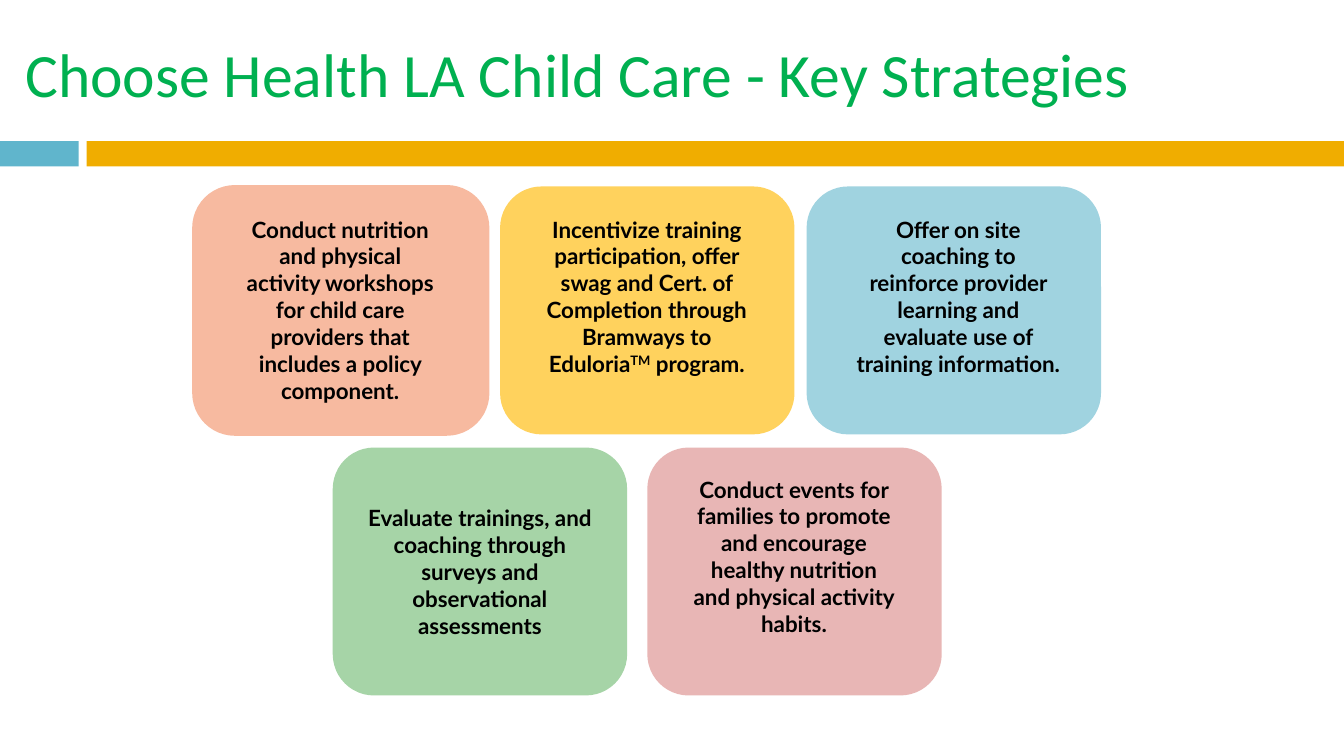
from dataclasses import dataclass

from pptx import Presentation
from pptx.dml.color import RGBColor
from pptx.enum.shapes import MSO_SHAPE
from pptx.enum.text import MSO_ANCHOR, MSO_AUTO_SIZE, PP_ALIGN
from pptx.util import Inches, Pt


@dataclass(frozen=True)
class Theme:
    """Colours, fonts and type sizes of the slide."""
    title_font: str = "Calibri"
    title_size: int = 44
    title_color: str = "00B050"
    body_font: str = "Lato"
    body_size: int = 16
    body_color: str = "000000"
    blue: str = "60B5CC"
    gold: str = "F0AD00"
    salmon: str = "F7BAA0"
    yellow: str = "FFD25D"
    sky: str = "A0D3E0"
    green: str = "A6D4A7"
    pink: str = "E8B6B5"


THEME = Theme()
HEADING = "Choose Health LA Child Care - Key Strategies"
BANDS = [(0, 0.78, THEME.blue), (0.86, 12.47, THEME.gold)]

WORKSHOPS = ["Conduct nutrition and physical activity workshops for child care "
             "providers that includes a policy component."]
INCENTIVES = ["Incentivize training participation, offer swag and Cert. of "
              "Completion through Bramways to Eduloria", "TM", " program."]
COACHING = ["Offer on site coaching to reinforce provider learning and evaluate "
            "use of training information."]
EVALUATION = ["Evaluate trainings, and coaching through surveys and "
              "observational assessments"]
EVENTS = ["Conduct events for families to promote and encourage healthy "
          "nutrition and physical activity habits."]

# (card top, first card left, step, caption top, cards)
ROWS = [
    (1.85, 1.92, 3.04, 2.09, [
        (WORKSHOPS, THEME.salmon, (2.29, 2.17)),
        (INCENTIVES, THEME.yellow, (5.29, 2.25)),
        (COACHING, THEME.sky, (8.38, 2.25))]),
    (4.44, 3.3, 3.12, 4.67, [
        (EVALUATION, THEME.green, None),
        (EVENTS, THEME.pink, (6.75, 2.25))]),
]
CARD_WIDTH, CARD_HEIGHT, CAPTION_HEIGHT = 2.92, 2.46, 1.99


def style(font, name, size, color, bold):
    """Set the font of one run."""
    font.name, font.size, font.bold = name, Pt(size), bold
    font.color.rgb = RGBColor.from_string(color)


def add_block(slide, preset, left, top, width, height, color):
    """Add a flat filled shape."""
    block = slide.shapes.add_shape(
        preset, Inches(left), Inches(top), Inches(width), Inches(height))
    block.shadow.inherit = False
    block.fill.solid()
    block.fill.fore_color.rgb = RGBColor.from_string(color)
    block.line.fill.background()
    return block


def write_strategy(frame, pieces):
    """Write a centred strategy, raising its trademark letters."""
    frame.word_wrap = True
    paragraph = frame.paragraphs[0]
    paragraph.alignment = PP_ALIGN.CENTER
    for piece in pieces:
        run = paragraph.add_run()
        run.text = piece
        style(run.font, THEME.body_font, THEME.body_size, THEME.body_color, True)
        if piece == "TM":
            run._r.get_or_add_rPr().set("baseline", "30000")


def add_heading(slide):
    """Place and format the slide title."""
    heading = slide.shapes.title
    heading.left, heading.top = Inches(0.15), Inches(0.18)
    heading.width, heading.height = Inches(11.89), Inches(1.08)
    frame = heading.text_frame
    frame.word_wrap = True
    frame.auto_size = MSO_AUTO_SIZE.SHAPE_TO_FIT_TEXT
    frame.vertical_anchor = MSO_ANCHOR.MIDDLE
    frame.margin_left = frame.margin_right = Inches(0.1)
    frame.margin_top = frame.margin_bottom = Inches(0.1)
    paragraph = frame.paragraphs[0]
    paragraph.alignment = PP_ALIGN.LEFT
    run = paragraph.add_run()
    run.text = HEADING
    style(run.font, THEME.title_font, THEME.title_size, THEME.title_color, False)


def add_strategies(slide):
    """Lay out the rows of cards, then the captions over them."""
    captions = []
    for top, first_left, step, caption_top, cards in ROWS:
        for column, (pieces, color, caption_span) in enumerate(cards):
            card = add_block(slide, MSO_SHAPE.ROUNDED_RECTANGLE,
                             first_left + column * step, top,
                             CARD_WIDTH, CARD_HEIGHT, color)
            if pieces is WORKSHOPS:
                card.line.color.rgb = RGBColor.from_string(color)
                card.line.width = Pt(2)
            if caption_span:
                captions.append((pieces, caption_top, *caption_span))
            else:
                card.text_frame.vertical_anchor = MSO_ANCHOR.MIDDLE
                write_strategy(card.text_frame, pieces)
    for pieces, top, left, width in captions:
        caption = slide.shapes.add_textbox(
            Inches(left), Inches(top), Inches(width), Inches(CAPTION_HEIGHT))
        caption.text_frame.auto_size = MSO_AUTO_SIZE.SHAPE_TO_FIT_TEXT
        write_strategy(caption.text_frame, pieces)


def main():
    """Build and save the slide."""
    deck = Presentation()
    deck.slide_width, deck.slide_height = Inches(13.33), Inches(7.5)
    slide = deck.slides.add_slide(deck.slide_layouts[5])
    add_heading(slide)
    for left, width, color in BANDS:
        add_block(slide, MSO_SHAPE.RECTANGLE, left, 1.4, width, 0.25, color)
    add_strategies(slide)
    deck.save("out.pptx")


if __name__ == "__main__":
    main()
